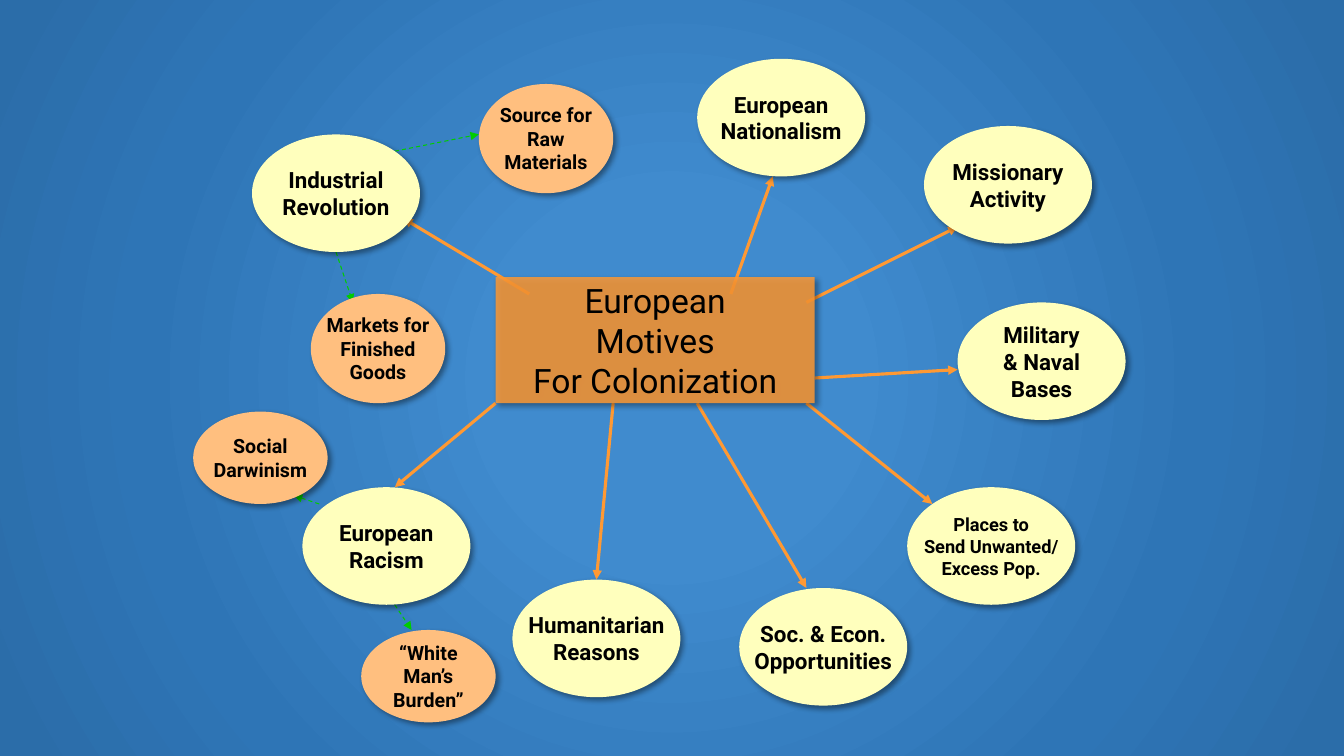
from dataclasses import dataclass

from lxml import etree
from pptx import Presentation
from pptx.dml.color import RGBColor
from pptx.enum.dml import MSO_LINE
from pptx.enum.shapes import MSO_CONNECTOR, MSO_SHAPE
from pptx.enum.text import MSO_ANCHOR, PP_ALIGN
from pptx.oxml.ns import qn
from pptx.util import Pt

PX = 9525  # EMU per pixel, 96 pixels to the inch
OVAL, RECTANGLE = MSO_SHAPE.OVAL, MSO_SHAPE.RECTANGLE
STRAIGHT, DASH = MSO_CONNECTOR.STRAIGHT, MSO_LINE.DASH
CENTER, MIDDLE = PP_ALIGN.CENTER, MSO_ANCHOR.MIDDLE


@dataclass(frozen=True)
class Theme:
    font: str = "Roboto"
    text: str = "000000"
    motive: str = "FFFFBD"
    detail: str = "FFBF7F"
    hub: str = "FF9933"
    spoke: str = "FF9933"
    branch: str = "00CC00"
    hub_size: int = 24
    motive_size: int = 16
    detail_size: int = 14
    small_size: int = 13
    spoke_width: float = 2.25
    branch_width: float = 0.75
    # position in percent, colour
    backdrop: tuple = ((0, "408BCE"), (23, "408BCE"), (69, "2E75B6"), (97, "2B6DA9"))


theme = Theme()


def add_node(kind, left, top, width, height, text, color, size, bold=True):
    """Add a filled shape with a soft shadow and centred text."""
    node = page.shapes.add_shape(kind, left * PX, top * PX, width * PX, height * PX)
    node.fill.solid()
    node.fill.fore_color.rgb = RGBColor.from_string(color)
    node.line.fill.background()
    node.shadow.inherit = False
    effects = node.element.spPr.find(qn("a:effectLst"))
    shadow = etree.SubElement(effects, qn("a:outerShdw"), blurRad=str(Pt(4)), dist=str(Pt(3)),
                              dir="2700000", algn="tl", rotWithShape="0")
    shade = etree.SubElement(shadow, qn("a:srgbClr"), val="000000")
    etree.SubElement(shade, qn("a:alpha"), val="40000")

    frame = node.text_frame
    frame.word_wrap = False
    frame.vertical_anchor = MIDDLE
    frame.text = text
    for para in frame.paragraphs:
        para.alignment = CENTER
        para.font.name = theme.font
        para.font.size = Pt(size)
        para.font.bold = bold
        para.font.color.rgb = RGBColor.from_string(theme.text)
    return node


def add_arrow(x1, y1, x2, y2, color, width):
    """Add a straight line with an arrowhead at its end."""
    arrow = page.shapes.add_connector(STRAIGHT, x1 * PX, y1 * PX, x2 * PX, y2 * PX)
    arrow.line.color.rgb = RGBColor.from_string(color)
    arrow.line.width = Pt(width)
    etree.SubElement(arrow.line._get_or_add_ln(), qn("a:tailEnd"), type="triangle")
    etree.SubElement(arrow.element.spPr, qn("a:effectLst"))
    return arrow


deck = Presentation()
deck.slide_width, deck.slide_height = 1280 * PX, 720 * PX
page = deck.slides.add_slide(deck.slide_layouts[6])

# Radial background
page.background.fill.gradient()
gradient = page.element.find(".//" + qn("a:gradFill"))
for child in list(gradient):
    gradient.remove(child)
stops = etree.SubElement(gradient, qn("a:gsLst"))
for position, color in theme.backdrop:
    stop = etree.SubElement(stops, qn("a:gs"), pos=str(position * 1000))
    etree.SubElement(stop, qn("a:srgbClr"), val=color)
circle = etree.SubElement(gradient, qn("a:path"), path="circle")
etree.SubElement(circle, qn("a:fillToRect"), l="50000", t="50000", r="50000", b="50000")

# Arrows from the hub to the motives
spokes = [
    (504, 280, 384, 208), (696, 280, 736, 168), (768, 288, 912, 216), (776, 360, 912, 352),
    (768, 384, 888, 480), (664, 384, 768, 560), (584, 384, 568, 552), (472, 384, 376, 464),
]
for ends in spokes:
    add_arrow(*ends, theme.spoke, theme.spoke_width)

# Dashed arrows from motives to their details
branches = [
    (376, 144, 456, 128), (320, 240, 336, 288), (376, 576, 392, 600), (304, 480, 280, 472),
]
for ends in branches:
    add_arrow(*ends, theme.branch, theme.branch_width).line.dash_style = DASH

# Hub
hub = add_node(RECTANGLE, 472, 264, 304, 120, "European\nMotives\nFor Colonization",
               theme.hub, theme.hub_size, bold=False)
hub_color = hub.element.spPr.find(qn("a:solidFill"))[0]
etree.SubElement(hub_color, qn("a:alpha"), val="84000")

# Motives: \n starts a paragraph, \v breaks a line
motives = [
    (240, 128, "Industrial\nRevolution", theme.motive_size),
    (664, 56, "European\vNationalism", theme.motive_size),
    (880, 120, "Missionary\vActivity", theme.motive_size),
    (912, 288, "Military\v& Naval\vBases", theme.motive_size),
    (864, 464, "Places to\vSend Unwanted/\vExcess Pop.", theme.small_size),
    (704, 560, "Soc. & Econ.\vOpportunities", theme.motive_size),
    (488, 552, "Humanitarian\vReasons", theme.motive_size),
    (288, 464, "European\vRacism", theme.motive_size),
]
for left, top, text, size in motives:
    add_node(OVAL, left, top, 160, 112, text, theme.motive, size)

# Details
details = [
    (456, 80, 104, "Source for\nRaw\nMaterials"),
    (296, 280, 104, "Markets for\vFinished\vGoods"),
    (344, 600, 88, "“White\vMan’s\vBurden”"),
    (184, 392, 88, "Social\vDarwinism"),
]
for left, top, height, text in details:
    add_node(OVAL, left, top, 128, height, text, theme.detail, theme.detail_size)

deck.save("out.pptx")
